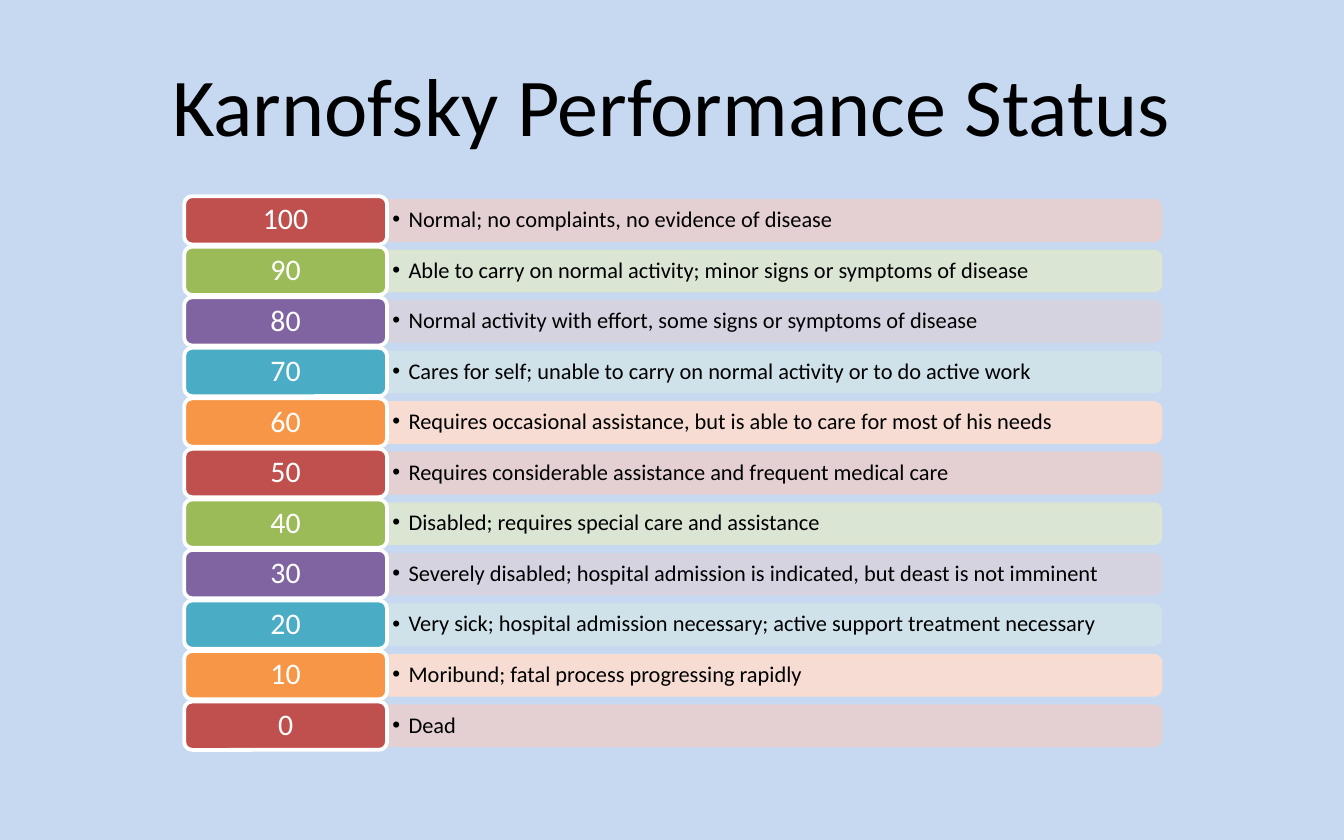
"""Build a slide that lists the Karnofsky performance status scale."""
from lxml import etree
from pptx import Presentation
from pptx import util as u
from pptx.dml.color import RGBColor
from pptx.enum import shapes, text
from pptx.oxml import ns

INK = {"back": "C6D9F1", "black": "000000", "white": "FFFFFF"}
HUES = {"C0504D": "E8D0D0", "9BBB59": "DEE7D1", "8064A2": "D8D3E0",
        "4BACC6": "D0E3EA", "F79646": "FCDDCF"}
GRADES = [
    "Normal; no complaints, no evidence of disease",
    "Able to carry on normal activity; minor signs or symptoms of disease",
    "Normal activity with effort, some signs or symptoms of disease",
    "Cares for self; unable to carry on normal activity or to do active work",
    "Requires occasional assistance, but is able to care for most of his needs",
    "Requires considerable assistance and frequent medical care",
    "Disabled; requires special care and assistance",
    "Severely disabled; hospital admission is indicated, but deast is not imminent",
    "Very sick; hospital admission necessary; active support treatment necessary",
    "Moribund; fatal process progressing rapidly",
    "Dead",
]
TOP, STEP = 1.46, 3.76 / 10
CHIP_H, BAR_W, BAR_H = 0.36, 0.29, 5.76


def write(shape, words, size, ink, align, side):
    frame = shape.text_frame
    look = {"word_wrap": True, "vertical_anchor": text.MSO_ANCHOR.MIDDLE,
            "margin_left": u.Inches(side), "margin_right": u.Inches(side),
            "margin_top": u.Inches(0.03), "margin_bottom": u.Inches(0.03)}
    for key, val in look.items():
        setattr(frame, key, val)
    para = frame.paragraphs[0]
    para.alignment = align
    run = para.add_run()
    run.text = words
    for key, val in {"name": "Calibri", "size": u.Pt(size)}.items():
        setattr(run.font, key, val)
    run.font.color.rgb = RGBColor.from_string(INK[ink])
    return para


def block(kind, box, fill, edge, alpha=None):
    shape = slide.shapes.add_shape(kind, *map(u.Inches, box))
    shape.shadow.inherit = False
    shape.fill.solid()
    shape.line.width = u.Pt(2)
    for part, hue in ((shape.fill.fore_color, fill), (shape.line.color, edge)):
        part.rgb = RGBColor.from_string(hue)
    if alpha:
        for clr in shape.fill._xPr.iter(ns.qn("a:srgbClr")):
            etree.SubElement(clr, ns.qn("a:alpha"), val=str(alpha * 1000))
    return shape


deck = Presentation()
deck.slide_width, deck.slide_height = u.Inches(10), u.Inches(6.25)
slide = deck.slides.add_slide(deck.slide_layouts[5])
slide.background.fill.solid()
slide.background.fill.fore_color.rgb = RGBColor.from_string(INK["back"])

title = slide.shapes.title
place = {"left": 0.5, "top": 0.25, "width": 9, "height": 1.04}
for key, val in place.items():
    setattr(title, key, u.Inches(val))
write(title, "Karnofsky Performance Status", 44, "black", text.PP_ALIGN.CENTER, 0.1)

hues = list(HUES.items())
for row, grade in enumerate(GRADES):
    dark, pale = hues[row % len(hues)]
    top = TOP + row * STEP
    mid = top + CHIP_H / 2

    bar = block(shapes.MSO_SHAPE.ROUND_2_SAME_RECTANGLE,
                (5.61, mid - BAR_H / 2, BAR_W, BAR_H), pale, pale, 90)
    bar.rotation = 90

    label = slide.shapes.add_textbox(*map(u.Inches, (2.87, mid - 0.13, 5.75, 0.26)))
    para = write(label, grade, 12, "black", text.PP_ALIGN.LEFT, 0.05)
    para.level, para.line_spacing = 1, 0.9
    props = para._p.get_or_add_pPr()
    props.set("marL", str(u.Inches(0.12)))
    props.set("indent", str(-u.Inches(0.12)))
    etree.SubElement(props, ns.qn("a:buFont"), typeface="Arial")
    etree.SubElement(props, ns.qn("a:buChar"), char="•")

    chip = block(shapes.MSO_SHAPE.ROUNDED_RECTANGLE,
                 (1.37, top, 1.51, CHIP_H), dark, INK["white"])
    score = write(chip, str(100 - 10 * row), 16, "white", text.PP_ALIGN.CENTER, 0.07)
    score.line_spacing = 0.9

deck.save("out.pptx")
